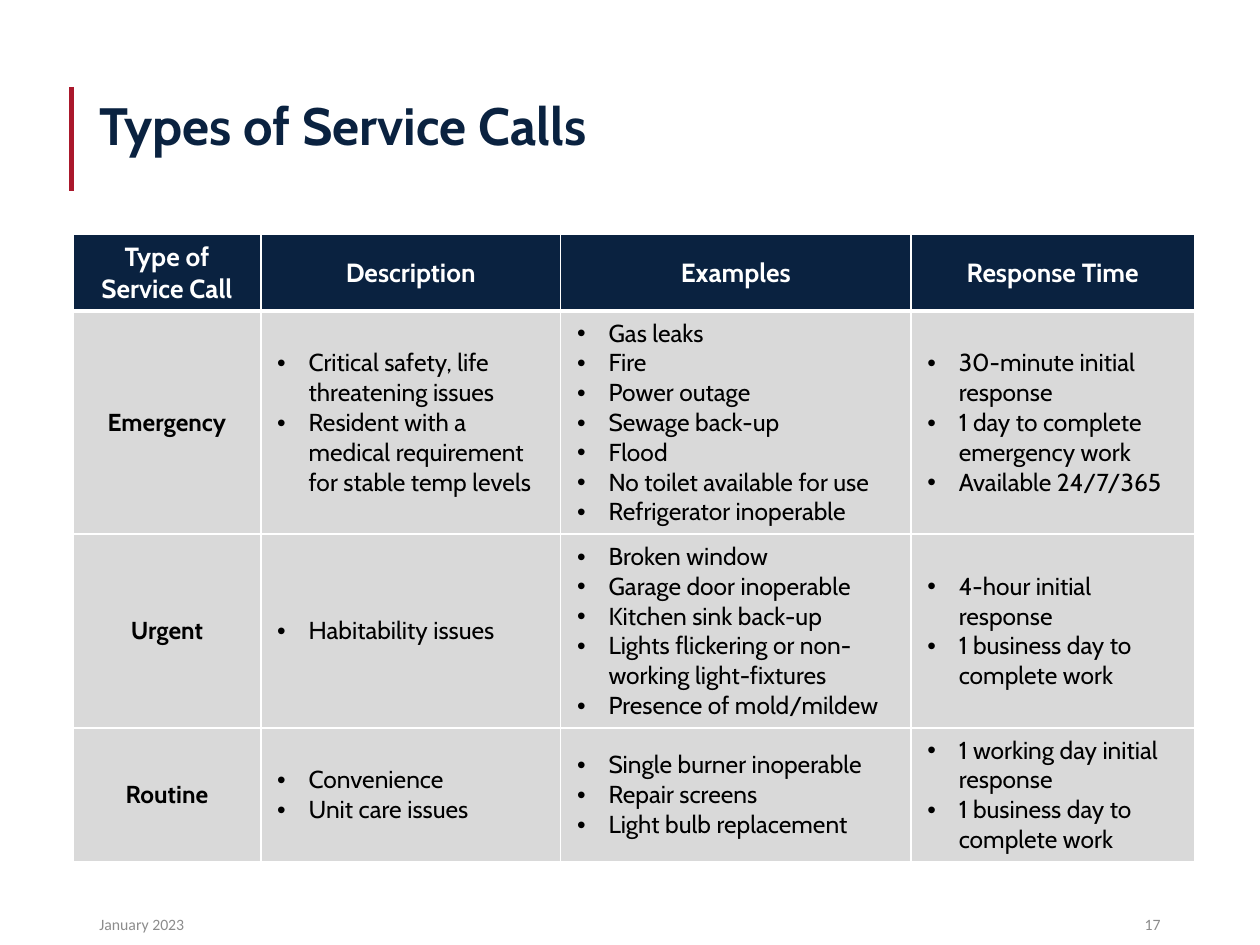
from lxml import etree
from pptx import Presentation, util as u
from pptx.dml.color import RGBColor
from pptx.enum import shapes, text
from pptx.oxml.ns import qn

COLORS = {"navy": "0A2240", "red": "AA182C", "white": "FFFFFF",
          "black": "000000", "cell": "D9D9D9", "footer": "8C8C8C"}
COLUMNS = [1.49, 2.38, 2.78, 2.25]
ROWS = [0.61, 1.77, 1.54, 1.06]
TABLE_LEFT, TABLE_TOP = 0.58, 1.86
TEXT_LEFT, TEXT_WIDTH = 0.69, 8.62
FOOTER_WIDTH = 2.25

HEADERS = ["Type of Service Call", "Description", "Examples", "Response Time"]
SERVICE_CALLS = [
    ["Emergency",
     ["Critical safety, life threatening issues",
      "Resident with a medical requirement for stable temp levels"],
     ["Gas leaks", "Fire", "Power outage", "Sewage back-up", "Flood",
      "No toilet available for use", "Refrigerator inoperable"],
     ["30-minute initial response", "1 day to complete emergency work",
      "Available 24/7/365"]],
    ["Urgent",
     ["Habitability issues"],
     ["Broken window", "Garage door inoperable", "Kitchen sink back-up",
      "Lights flickering or non-working light-fixtures",
      "Presence of mold/mildew"],
     ["4-hour initial response", "1 business day to complete work"]],
    ["Routine",
     ["Convenience", "Unit care issues"],
     ["Single burner inoperable", "Repair screens", "Light bulb replacement"],
     ["1 working day initial response", "1 business day to complete work"]],
]


def write(paragraph, words, color, align=text.PP_ALIGN.LEFT, **font):
    """Add one run; font holds values for the run's font (name, size, bold)."""
    paragraph.alignment = align
    run = paragraph.add_run()
    run.text = words
    run.font.color.rgb = RGBColor.from_string(COLORS[color])
    for name, value in font.items():
        setattr(run.font, name, value)


def add_border(cell, side, points):
    line = etree.SubElement(cell._tc.get_or_add_tcPr(), qn(f"a:ln{side}"),
                            w=str(u.Pt(points)))
    fill = etree.SubElement(line, qn("a:solidFill"))
    etree.SubElement(fill, qn("a:srgbClr"), val=COLORS["white"])


presentation = Presentation()
presentation.slide_width, presentation.slide_height = u.Inches(10), u.Inches(7.5)
slide = presentation.slides.add_slide(presentation.slide_layouts[6])

# Accent line beside the title
accent = slide.shapes.add_connector(
    shapes.MSO_CONNECTOR.STRAIGHT,
    u.Inches(0.57), u.Inches(0.69), u.Inches(0.57), u.Inches(1.52))
accent.line.color.rgb = RGBColor.from_string(COLORS["red"])
accent.line.width = u.Pt(3)
etree.SubElement(accent._element.spPr, qn("a:effectLst"))

# Title, date and page number
title_font = {"name": "Cabin", "size": u.Pt(30), "bold": True}
footer_font = {"name": "Calibri", "size": u.Pt(9)}
page_left = TEXT_LEFT + TEXT_WIDTH - FOOTER_WIDTH
for words, left, top, width, height, color, align, font in [
    ("Types of Service Calls", TEXT_LEFT, 0.75, TEXT_WIDTH, 0.64, "navy",
     text.PP_ALIGN.LEFT, title_font),
    ("January 2023", TEXT_LEFT, 7.21, FOOTER_WIDTH, 0.4, "footer",
     text.PP_ALIGN.LEFT, footer_font),
    ("17", page_left, 7.21, FOOTER_WIDTH, 0.4, "footer",
     text.PP_ALIGN.RIGHT, footer_font),
]:
    box = slide.shapes.add_textbox(*map(u.Inches, (left, top, width, height)))
    box.text_frame.word_wrap = True
    paragraph = box.text_frame.paragraphs[0]
    write(paragraph, words, color, align, **font)
    if font is title_font:
        paragraph.line_spacing = 0.9

# Service call table
table = slide.shapes.add_table(
    len(ROWS), len(COLUMNS), u.Inches(TABLE_LEFT), u.Inches(TABLE_TOP),
    u.Inches(sum(COLUMNS)), u.Inches(sum(ROWS))).table
for column, width in zip(table.columns, COLUMNS):
    column.width = u.Inches(width)
for row, height in zip(table.rows, ROWS):
    row.height = u.Inches(height)

for row_index, contents in enumerate([HEADERS] + SERVICE_CALLS):
    is_header = row_index == 0
    for column_index, content in enumerate(contents):
        cell = table.cell(row_index, column_index)
        cell.vertical_anchor = text.MSO_ANCHOR.MIDDLE
        for side in "LRTB":
            under_header = (row_index, side) in [(0, "B"), (1, "T")]
            add_border(cell, side, 3 if under_header else 1)
        cell.fill.solid()
        cell.fill.fore_color.rgb = RGBColor.from_string(
            COLORS["navy" if is_header else "cell"])

        is_list = isinstance(content, list)
        for index, words in enumerate(content if is_list else [content]):
            frame = cell.text_frame
            paragraph = frame.add_paragraph() if index else frame.paragraphs[0]
            write(paragraph, words, "white" if is_header else "black",
                  text.PP_ALIGN.LEFT if is_list else text.PP_ALIGN.CENTER,
                  name="Cabin", size=u.Pt(15 if is_header else 14),
                  bold=not is_list)
            if is_list:
                properties = paragraph._p.get_or_add_pPr()
                properties.set("marL", str(u.Inches(0.28)))
                properties.set("indent", str(u.Inches(-0.25)))
                etree.SubElement(properties, qn("a:buFont"), typeface="Arial")
                etree.SubElement(properties, qn("a:buChar"), char="•")

presentation.save("out.pptx")
